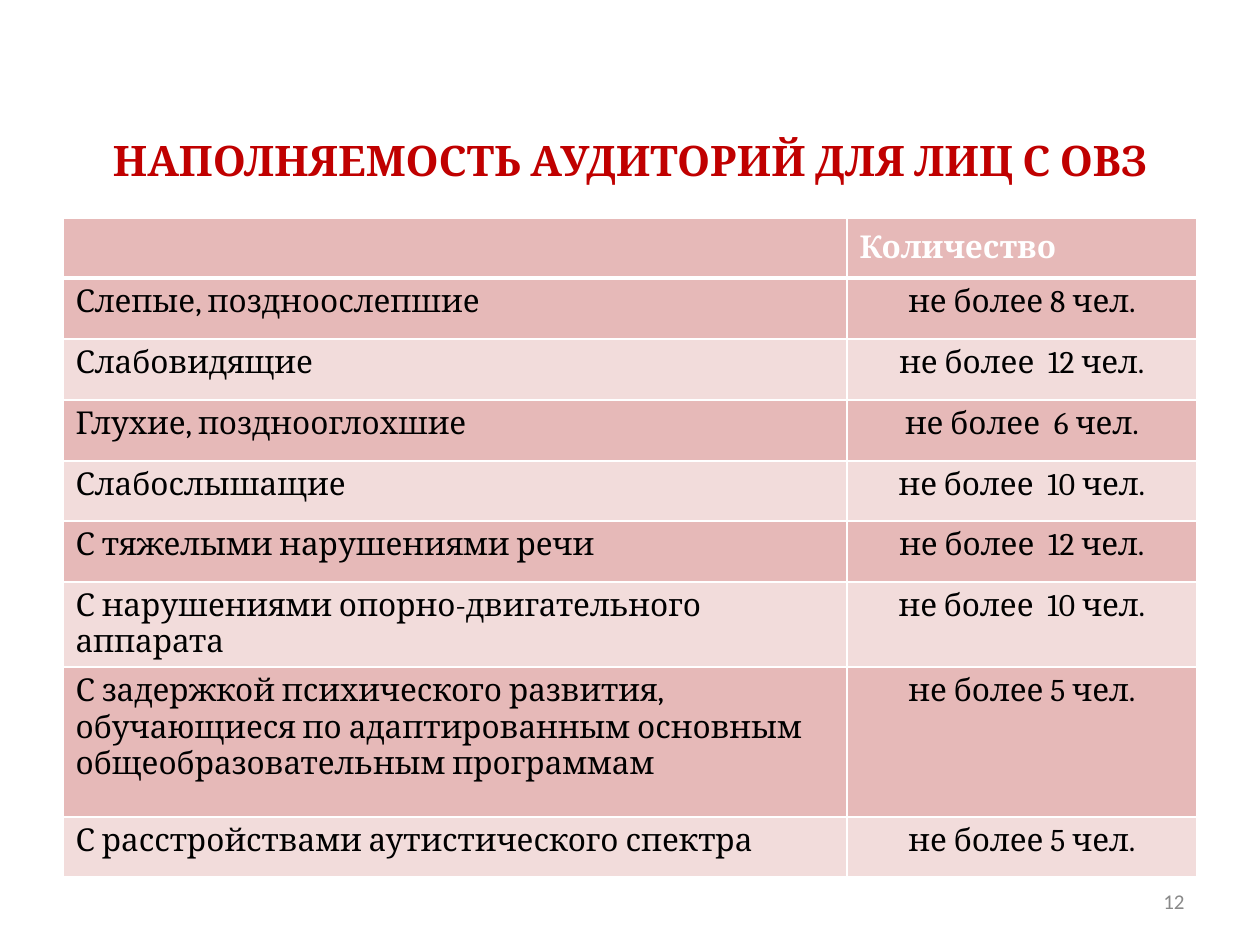
from lxml import etree
from pptx import Presentation, util as u
from pptx.dml.color import RGBColor
from pptx.enum import text
from pptx.oxml import ns

PX = 914400 / 126
WHITE = RGBColor(0xFF, 0xFF, 0xFF)
BLACK = RGBColor(0x00, 0x00, 0x00)
RED = RGBColor(0xC0, 0x00, 0x00)
GRAY = RGBColor(0x89, 0x89, 0x89)
ROSE = RGBColor(0xE6, 0xB9, 0xB8)
PALE = RGBColor(0xF2, 0xDC, 0xDB)
LEFT, CENTER, RIGHT = text.PP_ALIGN.LEFT, text.PP_ALIGN.CENTER, text.PP_ALIGN.RIGHT
TOP, MIDDLE = text.MSO_ANCHOR.TOP, text.MSO_ANCHOR.MIDDLE

TITLE = dict(name="Cambria", size=u.Pt(24), bold=True, color=RED)
HEADER = dict(name="Cambria", size=u.Pt(18), bold=True, color=WHITE)
BODY = dict(HEADER, bold=False, color=BLACK)
NUMBER = dict(name="Calibri", size=u.Pt(12), bold=False, color=GRAY)

COLUMNS = [784, 350]
HEIGHTS = [60, 61, 61, 61, 60, 61, 61, 150, 60]
ROWS = [
    ("", "Количество"),
    ("Слепые, поздноослепшие", "не более 8 чел."),
    ("Слабовидящие", "не более  12 чел."),
    ("Глухие, позднооглохшие", "не более  6 чел."),
    ("Слабослышащие", "не более  10 чел."),
    ("С тяжелыми нарушениями речи", "не более  12 чел."),
    ("С нарушениями опорно-двигательного аппарата", "не более  10 чел."),
    ("С задержкой психического развития, обучающиеся по адаптированным "
     "основным общеобразовательным программам", "не более 5 чел."),
    ("С расстройствами аутистического спектра", "не более 5 чел."),
]


def px(length):
    """Turn pixels into EMU."""
    return u.Emu(round(length * PX))


def write(frame, words, style, align):
    """Fill a text frame with one styled paragraph."""
    para = frame.paragraphs[0]
    para.alignment = align
    fonts = [para.font]
    if words:
        span = para.add_run()
        span.text = words
        fonts.append(span.font)
    for font in fonts:
        for key, value in style.items():
            if key == "color":
                font.color.rgb = value
            else:
                setattr(font, key, value)


def place(shape, box):
    """Move a shape to a pixel box."""
    for key, value in zip(("left", "top", "width", "height"), box):
        setattr(shape, key, px(value))


def border(cell, widths):
    """Draw white cell borders with widths in points by side."""
    for side in "LRTB":
        line = etree.SubElement(cell._tc.get_or_add_tcPr(), ns.qn(f"a:ln{side}"),
                                w=str(u.Pt(widths.get(side, 1))))
        fill = etree.SubElement(line, ns.qn("a:solidFill"))
        etree.SubElement(fill, ns.qn("a:srgbClr"), val=str(WHITE))


def add_title(page, box):
    """Place the slide title."""
    title = page.shapes.title
    place(title, box)
    frame = title.text_frame
    frame.word_wrap = True
    frame.auto_size = text.MSO_AUTO_SIZE.NONE
    frame.vertical_anchor = MIDDLE
    write(frame, "НАПОЛНЯЕМОСТЬ АУДИТОРИЙ ДЛЯ ЛИЦ С ОВЗ", TITLE, CENTER)


def add_capacity_table(page, box):
    """Place the table of room capacities."""
    table = page.shapes.add_table(len(ROWS), len(COLUMNS), *map(px, box)).table
    for column, width in zip(table.columns, COLUMNS):
        column.width = px(width)
    for row, height in zip(table.rows, HEIGHTS):
        row.height = px(height)
    for r, words in enumerate(ROWS):
        for c, phrase in enumerate(words):
            cell = table.cell(r, c)
            border(cell, {0: {"B": 3}, 1: {"T": 3}}.get(r, {}))
            cell.fill.solid()
            cell.fill.fore_color.rgb = PALE if r and r % 2 == 0 else ROSE
            cell.vertical_anchor = TOP if r else MIDDLE
            write(cell.text_frame, phrase, BODY if r else HEADER,
                  CENTER if r and c else LEFT)


def add_page_number(page, box):
    """Place the page number."""
    frame = page.shapes.add_textbox(*map(px, box)).text_frame
    frame.word_wrap = True
    frame.vertical_anchor = MIDDLE
    write(frame, "12", NUMBER, RIGHT)


def main():
    """Build and save the slide."""
    deck = Presentation()
    deck.slide_width, deck.slide_height = px(1260), px(945)
    page = deck.slides.add_slide(deck.slide_layouts[5])
    add_capacity_table(page, (63, 218, sum(COLUMNS), sum(HEIGHTS)))
    add_page_number(page, (903, 876, 294, 50))
    add_title(page, (0, 125, 1260, 70))
    deck.save("out.pptx")


if __name__ == "__main__":
    main()
